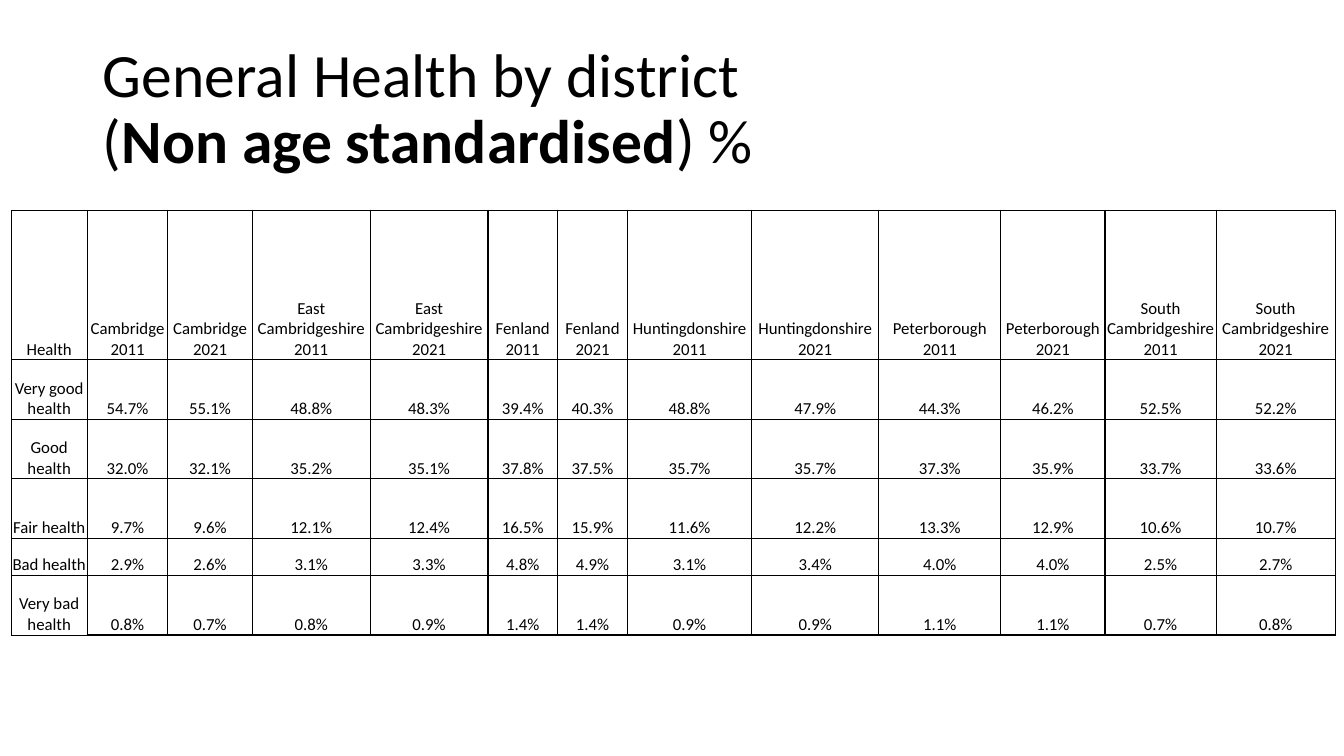
from lxml.etree import SubElement
from pptx import Presentation
from pptx.dml.color import RGBColor
from pptx.enum.text import MSO_ANCHOR, MSO_AUTO_SIZE, PP_ALIGN
from pptx.oxml.ns import qn
from pptx.util import Cm, Pt

BLACK = "000000"


def style_font(font, size, color):
    font.name = "Calibri"
    font.size = Pt(size)
    font.color.rgb = RGBColor.from_string(color)


def add_border(cell, side, width, color):
    line = SubElement(cell._tc.get_or_add_tcPr(), qn(f"a:ln{side}"), w=str(Pt(width)))
    fill = SubElement(line, qn("a:solidFill"))
    SubElement(fill, qn("a:srgbClr"), val=color)


deck = Presentation()
deck.slide_width = Cm(33.87)
deck.slide_height = Cm(19.05)
page = deck.slides.add_slide(deck.slide_layouts[5])

title = page.shapes.title
title.left, title.top, title.width, title.height = Cm(2.34), Cm(0.86), Cm(19.25), Cm(3.84)
title.text_frame.word_wrap = True
title.text_frame.auto_size = MSO_AUTO_SIZE.NONE
title.text_frame.vertical_anchor = MSO_ANCHOR.MIDDLE
para = title.text_frame.paragraphs[0]
para.alignment = PP_ALIGN.LEFT
para.line_spacing = 0.9
for text, bold in [
    ("General Health by district (", False),
    ("Non age standardised", True),
    (") %", False),
]:
    span = para.add_run()
    span.text = text
    style_font(span.font, 44, BLACK)
    span.font.bold = bold

districts = [
    "Cambridge",
    "East Cambridgeshire",
    "Fenland",
    "Huntingdonshire",
    "Peterborough",
    "South Cambridgeshire",
]
health_shares = {
    "Very good health": [54.7, 55.1, 48.8, 48.3, 39.4, 40.3, 48.8, 47.9, 44.3, 46.2, 52.5, 52.2],
    "Good health": [32.0, 32.1, 35.2, 35.1, 37.8, 37.5, 35.7, 35.7, 37.3, 35.9, 33.7, 33.6],
    "Fair health": [9.7, 9.6, 12.1, 12.4, 16.5, 15.9, 11.6, 12.2, 13.3, 12.9, 10.6, 10.7],
    "Bad health": [2.9, 2.6, 3.1, 3.3, 4.8, 4.9, 3.1, 3.4, 4.0, 4.0, 2.5, 2.7],
    "Very bad health": [0.8, 0.7, 0.8, 0.9, 1.4, 1.4, 0.9, 0.9, 1.1, 1.1, 0.7, 0.8],
}
rows = [["Health"] + [f"{district} {year}" for district in districts for year in (2011, 2021)]]
for health, shares in health_shares.items():
    rows.append([health] + [f"{share:.1f}%" for share in shares])

column_widths = [1.92, 2.03, 2.13, 2.97, 2.97, 1.75, 1.77, 3.12, 3.21, 3.07, 2.63, 2.8, 3]
row_heights = [3.76, 1.5, 1.5, 1.5, 0.94, 1.5]
frame = page.shapes.add_table(
    len(rows), len(column_widths),
    Cm(0.28), Cm(5.3), Cm(sum(column_widths)), Cm(sum(row_heights)),
)
table = frame.table
table.first_row = False
table.horz_banding = False
for column, width in zip(table.columns, column_widths):
    column.width = Cm(width)
for row, height in zip(table.rows, row_heights):
    row.height = Cm(height)

for r, texts in enumerate(rows):
    for c, text in enumerate(texts):
        cell = table.cell(r, c)
        cell.margin_left = cell.margin_right = cell.margin_top = cell.margin_bottom = 0
        cell.vertical_anchor = MSO_ANCHOR.BOTTOM
        thick_sides = {
            "L": c % 2 == 1,
            "R": c % 2 == 0,
            "T": r == 0 and c > 0,
            "B": r == len(rows) - 1 and c > 0,
        }
        for side, thick in thick_sides.items():
            add_border(cell, side, 1 if thick else 0.5, BLACK)
        cell.fill.background()
        para = cell.text_frame.paragraphs[0]
        para.text = text
        para.alignment = PP_ALIGN.CENTER
        style_font(para.runs[0].font, 12, BLACK)

deck.save("out.pptx")
